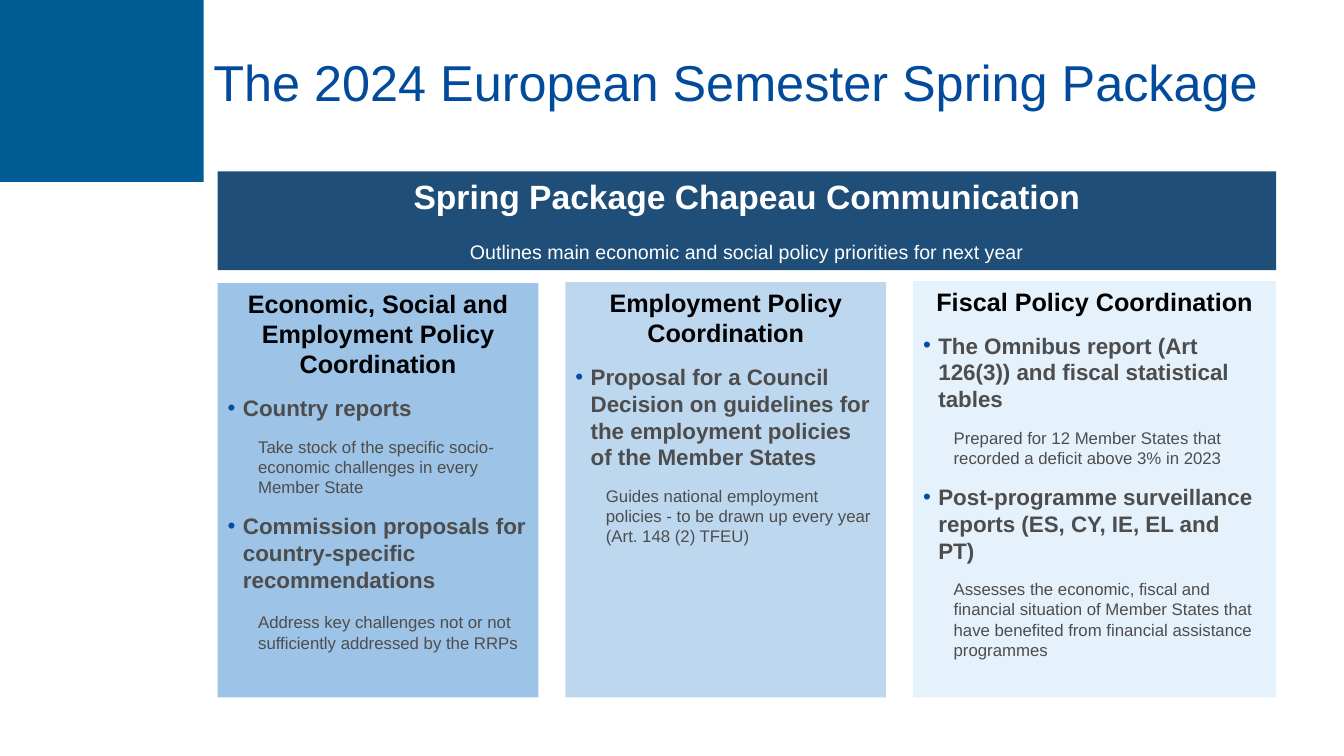
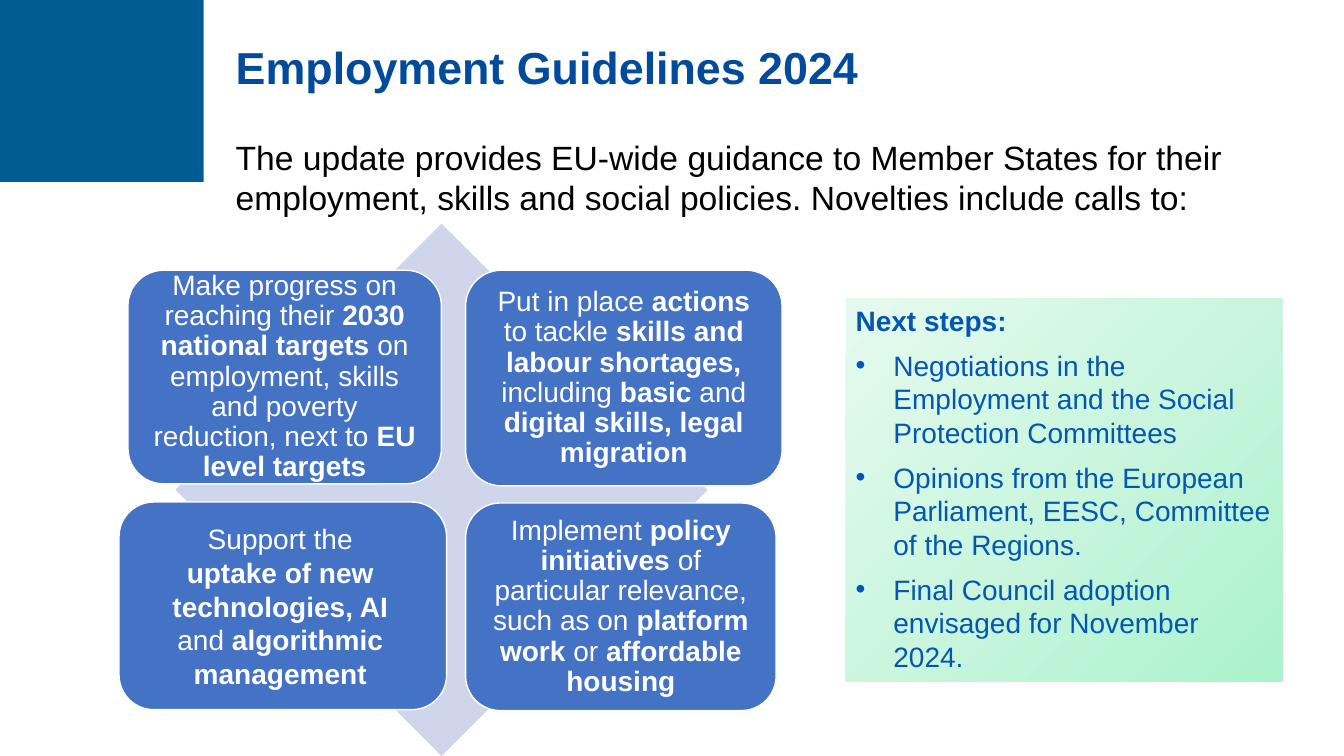
import pptx
import pptx.dml.color
import pptx.enum.shapes
import pptx.enum.text
import pptx.oxml
import pptx.oxml.ns
import pptx.util
from lxml import etree

Pt = pptx.util.Pt
RGBColor = pptx.dml.color.RGBColor
SHAPE = pptx.enum.shapes.MSO_SHAPE
ALIGN = pptx.enum.text.PP_ALIGN
ANCHOR = pptx.enum.text.MSO_ANCHOR

WHITE = RGBColor(0xFF, 0xFF, 0xFF)
BLACK = RGBColor(0x00, 0x00, 0x00)
GREY = RGBColor(0x4D, 0x4D, 0x4D)
CORNER_BLUE = RGBColor(0x00, 0x5D, 0x94)
TITLE_BLUE = RGBColor(0x02, 0x4B, 0x9C)
BULLET_BLUE = RGBColor(0x03, 0x4E, 0xA2)
STEPS_BLUE = RGBColor(0x03, 0x56, 0xB1)
CHAPEAU_BLUE = RGBColor(0x1F, 0x4E, 0x79)
CARD_BLUE = RGBColor(0x44, 0x72, 0xC4)
DIAMOND_BLUE = RGBColor(0xCF, 0xD5, 0xEA)
PANEL_BLUES = (
    RGBColor(0x9D, 0xC3, 0xE6),
    RGBColor(0xBD, 0xD7, 0xEE),
    RGBColor(0xE5, 0xF1, 0xFB),
)
STEPS_GREENS = (
    (0, RGBColor(0xAA, 0xF2, 0xCC)),
    (50, RGBColor(0xCA, 0xF6, 0xDE)),
    (100, RGBColor(0xE5, 0xFA, 0xEE)),
)


def style(size, color, bold=False, bullet=None, margin=0, hang=0, **layout):
    return {
        "font": {"name": "Arial", "size": Pt(size), "bold": bold},
        "color": color,
        "bullet": bullet,
        "margin": margin,
        "hang": hang,
        "layout": {"alignment": ALIGN.LEFT, "space_before": Pt(0), "space_after": Pt(0)} | layout,
    }


TITLE = style(36, TITLE_BLUE, line_spacing=0.9)
TITLE_BOLD = style(32, TITLE_BLUE, bold=True, line_spacing=0.9)
INTRO = style(24, BLACK)

CHAPEAU = style(24, WHITE, bold=True, alignment=ALIGN.CENTER)
CHAPEAU_NOTE = style(14, WHITE, alignment=ALIGN.CENTER, space_before=Pt(16.5))

GAP = Pt(10.9)
HEADING = style(18, BLACK, bold=True, alignment=ALIGN.CENTER, space_after=GAP)
TOPIC = style(16, GREY, bold=True, bullet=BULLET_BLUE, margin=10.9, hang=10.9, space_after=GAP)
DETAIL = style(12, GREY, margin=21.8, space_after=GAP)
LOW_DETAIL = style(12, GREY, margin=21.8, space_before=Pt(3), space_after=GAP)

CARD = style(20, WHITE, alignment=ALIGN.CENTER, line_spacing=0.9)
CARD_OPEN = style(20, WHITE, alignment=ALIGN.CENTER)
STEPS_HEADING = style(20, STEPS_BLUE, bold=True)
STEP = style(20, STEPS_BLUE, bullet=STEPS_BLUE, margin=27, hang=27, space_before=Pt(8))

PANELS = (
    (202.3, 229, (
        ("Economic, Social and Employment Policy Coordination", HEADING),
        ("Country reports", TOPIC),
        ("Take stock of the specific socio-economic challenges in every Member State", DETAIL),
        ("Commission proposals for country-specific recommendations", TOPIC),
        ("Address key challenges not or not sufficiently addressed by the RRPs", LOW_DETAIL),
    )),
    (201.6, 229, (
        ("Employment Policy Coordination", HEADING),
        ("Proposal for a Council Decision on guidelines for the employment policies "
         "of the Member States", TOPIC),
        ("Guides national employment policies - to be drawn up every year "
         "(Art. 148 (2) TFEU)", DETAIL),
    )),
    (200.9, 259.2, (
        ("Fiscal Policy Coordination", HEADING),
        ("The Omnibus report (Art 126(3)) and fiscal statistical tables", TOPIC),
        ("Prepared for 12 Member States that recorded a deficit above 3% in 2023", DETAIL),
        ("Post-programme surveillance reports (ES, CY, IE, EL and\vPT)", TOPIC),
        ("Assesses the economic, fiscal and financial situation of Member States that "
         "have benefited from financial assistance programmes", DETAIL),
    )),
)
PANEL_LEFT, PANEL_STEP, PANEL_BOTTOM = 155.5, 248.4, 498.2

# Place, left and right inset, style, text with *bold* passages
CARDS = (
    ((91.4, 193, 223.9, 152.6), (5.8, 5.8), CARD,
     "Make progress on reaching their *2030 national targets* on employment, skills "
     "and poverty reduction, next to *EU level targets*"),
    ((332.6, 193, 226.1, 154.1), (5.8, 5.8), CARD,
     "Put in place *actions* to tackle *skills and labour shortages,* including "
     "*basic* and *digital skills, legal migration*"),
    ((85, 358.6, 234, 148.3), (27.4, 31), CARD_OPEN,
     "Support the *uptake of new technologies, AI* and *algorithmic management*"),
    ((332.6, 359.3, 221.8, 148.3), (5.8, 5.8), CARD,
     "Implement *policy initiatives* of particular relevance, such as on "
     "*platform work* or *affordable housing*"),
)

STEPS = (
    ("Next steps:", STEPS_HEADING),
    ("Negotiations in the Employment and the Social Protection Committees", STEP),
    ("Opinions from the European Parliament, EESC, Committee of the Regions.", STEP),
    ("Final Council adoption envisaged for November 2024.", STEP),
)


def set_all(target, values):
    for name, value in values.items():
        setattr(target, name, value)


def add_bullet(paragraph, color):
    properties = paragraph._p.get_or_add_pPr()
    tag = pptx.oxml.ns.qn
    bullet_color = etree.SubElement(properties, tag("a:buClr"))
    etree.SubElement(bullet_color, tag("a:srgbClr"), val=str(color))
    etree.SubElement(properties, tag("a:buFont"), typeface="Arial")
    etree.SubElement(properties, tag("a:buChar"), char="•")


def write_paragraph(paragraph, text, look):
    """Write text; *stars* enclose bold passages and a vertical tab breaks the line."""
    properties = paragraph._p.get_or_add_pPr()
    properties.set("marL", str(Pt(look["margin"])))
    properties.set("indent", str(-Pt(look["hang"])))
    if look["bullet"]:
        add_bullet(paragraph, look["bullet"])
    set_all(paragraph, look["layout"])
    for passage_index, passage in enumerate(text.split("*")):
        for line_index, line in enumerate(passage.split("\v")):
            if line_index:
                paragraph.add_line_break()
            run = paragraph.add_run()
            run.text = line
            set_all(run.font, look["font"])
            run.font.color.rgb = look["color"]
            if passage_index % 2:
                run.font.bold = True


def write(shape, paragraphs, anchor=ANCHOR.TOP, insets=(7.2, 7.2)):
    frame = shape.text_frame
    set_all(frame, {
        "word_wrap": True,
        "vertical_anchor": anchor,
        "margin_left": Pt(insets[0]),
        "margin_right": Pt(insets[1]),
    })
    for index, (text, look) in enumerate(paragraphs):
        paragraph = frame.add_paragraph() if index else frame.paragraphs[0]
        write_paragraph(paragraph, text, look)


def add_text(slide, place, text, look, anchor=ANCHOR.TOP):
    write(slide.shapes.add_textbox(*map(Pt, place)), [(text, look)], anchor)


def add_block(slide, kind, place, fill, line=None):
    block = slide.shapes.add_shape(kind, *map(Pt, place))
    block.shadow.inherit = False
    block.fill.solid()
    block.fill.fore_color.rgb = fill
    if line is None:
        block.line.fill.background()
    else:
        block.line.color.rgb = line
        block.line.width = Pt(1)
    return block


def add_slide(deck, title, place, look):
    """Add a slide with the shared plain corner block and a title."""
    slide = deck.slides.add_slide(deck.slide_layouts[6])
    add_block(slide, SHAPE.RECTANGLE, (0, 0, 145.4, 130), CORNER_BLUE)
    add_text(slide, place, title, look, ANCHOR.MIDDLE)
    return slide


def fill_from_corner(shape, stops):
    """Spread a round gradient from the bottom right corner."""
    shape.fill.background()
    stop_list = "".join(
        f'<a:gs pos="{position * 1000}"><a:srgbClr val="{color}"/></a:gs>'
        for position, color in stops
    )
    gradient = pptx.oxml.parse_xml(
        f'<a:gradFill {pptx.oxml.ns.nsdecls("a")} rotWithShape="1">'
        f"<a:gsLst>{stop_list}</a:gsLst>"
        '<a:path path="circle"><a:fillToRect l="100000" t="100000"/></a:path>'
        '<a:tileRect r="-100000" b="-100000"/></a:gradFill>'
    )
    properties = shape._element.spPr
    properties.replace(properties.find(pptx.oxml.ns.qn("a:noFill")), gradient)


def build_spring_package(deck):
    slide = add_slide(deck, "The 2024 European Semester Spring Package",
                      (145.4, 28.8, 765.4, 64.1), TITLE)
    chapeau = add_block(slide, SHAPE.RECTANGLE, (PANEL_LEFT, 122.4, 756, 70.6), CHAPEAU_BLUE)
    write(chapeau, [
        ("Spring Package Chapeau Communication", CHAPEAU),
        ("Outlines main economic and social policy priorities for next year", CHAPEAU_NOTE),
    ])
    for index, (top, width, paragraphs) in enumerate(PANELS):
        place = (PANEL_LEFT + index * PANEL_STEP, top, width, PANEL_BOTTOM - top)
        write(add_block(slide, SHAPE.RECTANGLE, place, PANEL_BLUES[index]), paragraphs)


def build_guidelines(deck):
    slide = add_slide(deck, "Employment Guidelines 2024",
                      (161.3, 20.9, 790, 57.6), TITLE_BOLD)
    add_block(slide, SHAPE.DIAMOND, (125.3, 159.8, 380.2, 380.2), DIAMOND_BLUE)
    for place, insets, look, text in CARDS:
        card = add_block(slide, SHAPE.ROUNDED_RECTANGLE, place, CARD_BLUE, WHITE)
        write(card, [(text, look)], ANCHOR.MIDDLE, insets)
    add_text(slide, (161.3, 94.3, 740.9, 65.5),
             "The update provides EU-wide guidance to Member States for their employment, "
             "skills and social policies. Novelties include calls to:", INTRO)
    steps = add_block(slide, SHAPE.RECTANGLE, (604.1, 213.1, 311.8, 273.6), WHITE)
    fill_from_corner(steps, STEPS_GREENS)
    write(steps, STEPS)


def main():
    deck = pptx.Presentation()
    deck.slide_width, deck.slide_height = Pt(960), Pt(540)
    build_spring_package(deck)
    build_guidelines(deck)
    deck.save("out.pptx")


if __name__ == "__main__":
    main()
